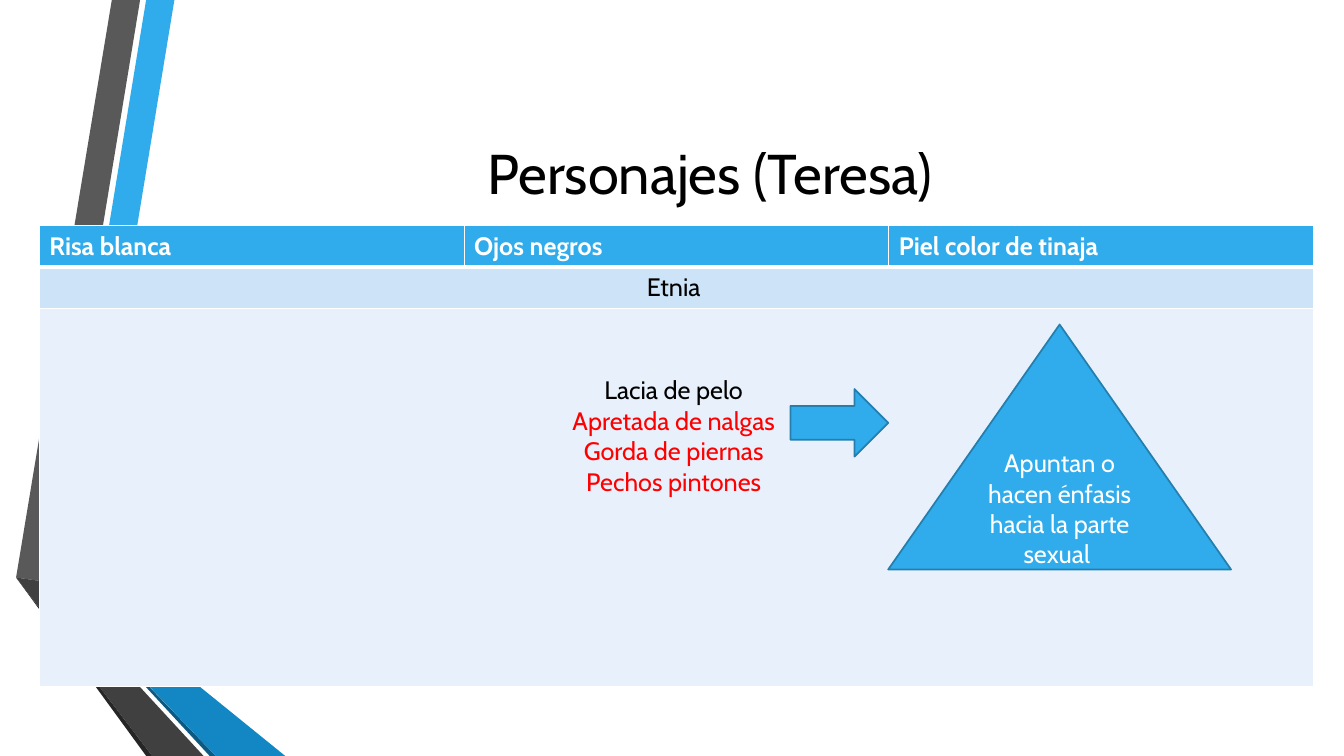
from dataclasses import dataclass

from lxml import etree
from pptx import Presentation
from pptx.dml.color import RGBColor
from pptx.enum.shapes import MSO_SHAPE
from pptx.enum.text import MSO_ANCHOR, PP_ALIGN
from pptx.oxml.ns import qn
from pptx.util import Inches, Pt

FONT = "Cabin"
BLACK = RGBColor(0x00, 0x00, 0x00)
WHITE = RGBColor(0xFF, 0xFF, 0xFF)
RED = RGBColor(0xFF, 0x00, 0x00)
BLUE = RGBColor(0x30, 0xAC, 0xEC)
EDGE = RGBColor(0x24, 0x7F, 0xAF)
MID = RGBColor(0x12, 0x87, 0xC3)
NAVY = RGBColor(0x0C, 0x5A, 0x82)
GRAY = RGBColor(0x59, 0x59, 0x59)
DARK = RGBColor(0x40, 0x40, 0x40)
COAL = RGBColor(0x26, 0x26, 0x26)
PALE = RGBColor(0xCD, 0xE3, 0xF8)
ICE = RGBColor(0xE8, 0xF1, 0xFB)
LEFT, CENTER = PP_ALIGN.LEFT, PP_ALIGN.CENTER
MIDDLE = MSO_ANCHOR.MIDDLE
ARROW, PEAK = MSO_SHAPE.RIGHT_ARROW, MSO_SHAPE.FLOWCHART_EXTRACT


@dataclass
class Band:
    color: RGBColor
    points: list[tuple[float, float]]


@dataclass
class Line:
    text: str
    color: RGBColor
    size: int = 18
    bold: bool = False
    align: PP_ALIGN = CENTER


@dataclass
class Mark:
    kind: MSO_SHAPE
    box: tuple[float, float, float, float]
    lines: list[Line]


BANDS = [
    Band(BLUE, [(0.5, 5.78), (0.77, 5.83), (1.73, 0), (1.45, 0)]),
    Band(GRAY, [(1.39, 0), (1.11, 0), (0.16, 5.73), (0.44, 5.77)]),
    Band(COAL, [(0.16, 5.73), (1.45, 7.5), (1.51, 7.5)]),
    Band(NAVY, [(0.5, 5.79), (2.08, 7.5), (2.14, 7.5)]),
    Band(MID, [(0.5, 5.78), (2.14, 7.5), (2.83, 7.5), (0.77, 5.83)]),
    Band(DARK, [(2.02, 7.5), (0.48, 5.83), (0.44, 5.77), (0.16, 5.73),
                (1.51, 7.5)]),
]
HEADS = ["Risa blanca", "Ojos negros", "Piel color de tinaja"]
TRAITS = [
    Line("Lacia de pelo ", BLACK),
    Line("Apretada de nalgas ", RED),
    Line("Gorda de piernas ", RED),
    Line("Pechos pintones ", RED),
]
ROWS = [0.41, 0.41, 3.75]
FILLS = [BLUE, PALE, ICE]
MARKS = [
    Mark(ARROW, (7.84, 3.86, 0.97, 0.67), []),
    Mark(PEAK, (8.81, 3.22, 3.4, 2.43),
         [Line("Apuntan o hacen énfasis hacia la parte sexual ", WHITE)]),
]


def write(frame, lines: list[Line]) -> None:
    for i, line in enumerate(lines):
        para = frame.add_paragraph() if i else frame.paragraphs[0]
        para.alignment = line.align
        run = para.add_run()
        run.text = line.text
        run.font.name = FONT
        run.font.size = Pt(line.size)
        run.font.bold = line.bold
        run.font.color.rgb = line.color


def draw_band(slide, band: Band) -> None:
    spots = [(Inches(x), Inches(y)) for x, y in band.points]
    pen = slide.shapes.build_freeform(*spots[0])
    pen.add_line_segments(spots[1:])
    shape = pen.convert_to_shape()
    shape.shadow.inherit = False
    shape.fill.solid()
    shape.fill.fore_color.rgb = band.color
    shape.line.fill.background()


def edge(cell, side: str, width: float) -> None:
    props = cell._tc.get_or_add_tcPr()
    line = etree.SubElement(props, qn(f"a:ln{side}"), w=str(Pt(width)))
    fill = etree.SubElement(line, qn("a:solidFill"))
    etree.SubElement(fill, qn("a:srgbClr"), val=str(WHITE))


def draw_table(slide) -> None:
    size = Inches(12.64), Inches(sum(ROWS))
    table = slide.shapes.add_table(
        len(ROWS), len(HEADS), Inches(0.39), Inches(2.24), *size).table
    for col in table.columns:
        col.width = round(size[0] / len(HEADS))
    for r, (high, color) in enumerate(zip(ROWS, FILLS)):
        table.rows[r].height = Inches(high)
        for cell in table.rows[r].cells:
            edge(cell, "L", 1)
            edge(cell, "R", 1)
            edge(cell, "T", 3 if r == 1 else 1)
            edge(cell, "B", 3 if r == 0 else 1)
            cell.fill.solid()
            cell.fill.fore_color.rgb = color
    for c, head in enumerate(HEADS):
        write(table.cell(0, c).text_frame,
              [Line(head, WHITE, bold=True, align=LEFT)])
    for r, lines in ((1, [Line("Etnia ", BLACK)]), (2, TRAITS)):
        cell = table.cell(r, 0)
        cell.merge(table.cell(r, len(HEADS) - 1))
        write(cell.text_frame, lines)
    table.cell(2, 0).margin_top = Inches(0.66)


def draw_mark(slide, mark: Mark) -> None:
    shape = slide.shapes.add_shape(mark.kind, *map(Inches, mark.box))
    shape.shadow.inherit = False
    shape.fill.solid()
    shape.fill.fore_color.rgb = BLUE
    shape.line.color.rgb = EDGE
    shape.line.width = Pt(1.25)
    shape.text_frame.word_wrap = True
    shape.text_frame.vertical_anchor = MIDDLE
    write(shape.text_frame, mark.lines)


def main() -> None:
    deck = Presentation()
    deck.slide_width, deck.slide_height = Inches(13.33), Inches(7.5)
    slide = deck.slides.add_slide(deck.slide_layouts[5])

    # Ribbons at the left
    for band in BANDS:
        draw_band(slide, band)

    # Title
    title = slide.shapes.title
    title.left, title.top = Inches(1.62), Inches(0.75)
    title.width, title.height = Inches(10.96), Inches(1.92)
    title.text_frame.vertical_anchor = MIDDLE
    write(title.text_frame, [Line("Personajes (Teresa) ", BLACK, 40)])

    # Table, then the arrow and triangle over it
    draw_table(slide)
    for mark in MARKS:
        draw_mark(slide, mark)
    deck.save("out.pptx")


if __name__ == "__main__":
    main()
